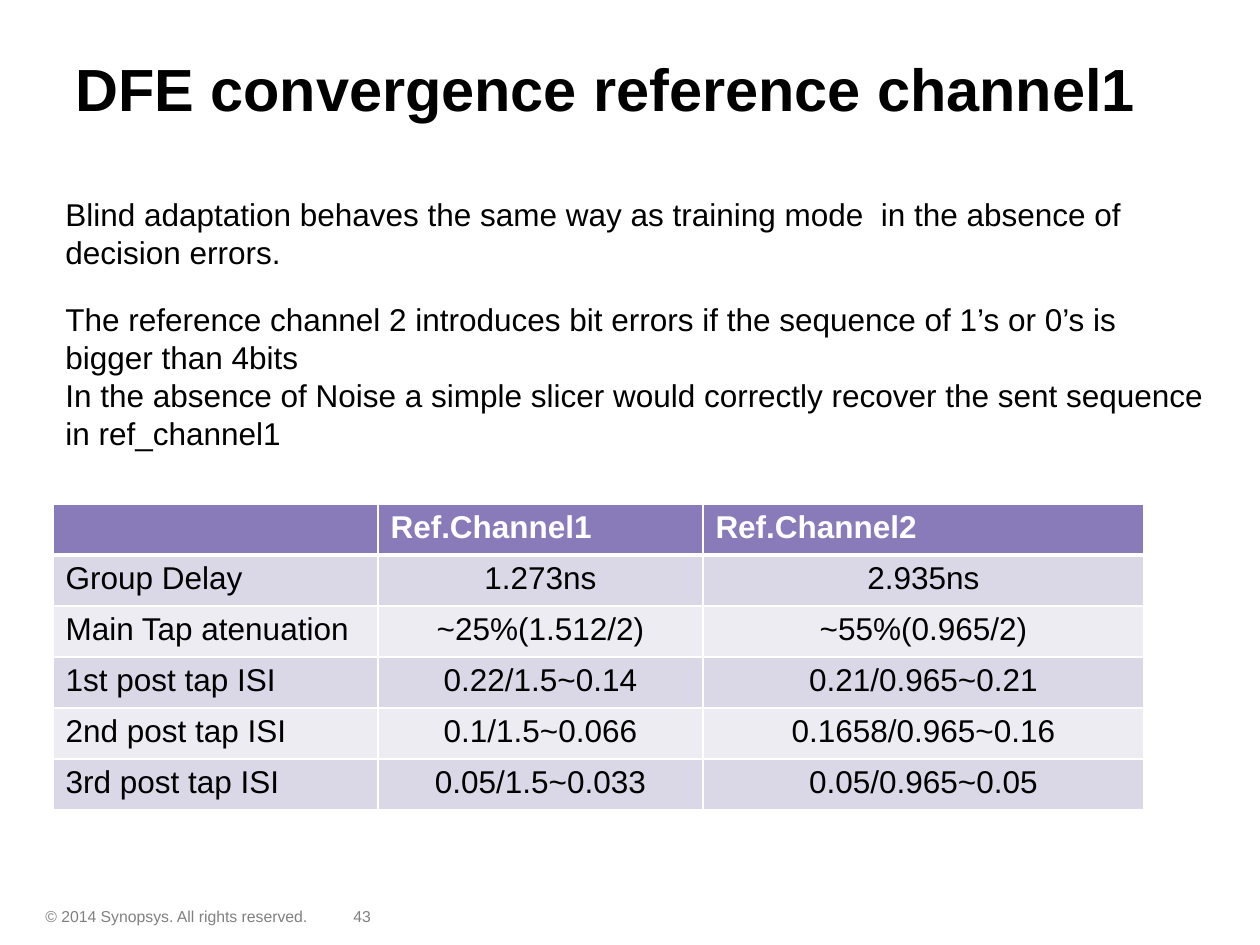
from lxml.etree import SubElement
from pptx import Presentation
from pptx.dml.color import RGBColor
from pptx.enum.text import MSO_ANCHOR, PP_ALIGN
from pptx.oxml.ns import qn
from pptx.util import Emu, Pt

COLORS = {
    "black": "000000",
    "white": "FFFFFF",
    "grey": "808080",
    "header": "897ABA",
    "odd": "DAD7E7",
    "even": "EDECF3",
}
FORMATS = {
    "title": {"size": Pt(34), "bold": True, "color": "black"},
    "body": {"size": Pt(18), "bold": False, "color": "black"},
    "header": {"size": Pt(18), "bold": True, "color": "white"},
    "footer": {"size": Pt(9), "bold": False, "color": "grey"},
}
FONT = "Arial"
EMU_PER_PX = 914400 / 126

CHANNEL_ROWS = [
    ["", "Ref.Channel1", "Ref.Channel2"],
    ["Group Delay", "1.273ns", "2.935ns"],
    ["Main Tap atenuation", "~25%(1.512/2)", "~55%(0.965/2)"],
    ["1st post tap ISI", "0.22/1.5~0.14", "0.21/0.965~0.21"],
    ["2nd post tap ISI", "0.1/1.5~0.066", "0.1658/0.965~0.16"],
    ["3rd post tap ISI", "0.05/1.5~0.033", "0.05/0.965~0.05"],
]


def px(length):
    return Emu(round(length * EMU_PER_PX))


class SlideBuilder:
    def __init__(self, deck):
        self.page = deck.slides.add_slide(deck.slide_layouts[6])

    def style(self, para, name):
        values = {"name": FONT, **FORMATS[name]}
        color = values.pop("color")
        for attribute, value in values.items():
            setattr(para.font, attribute, value)
        para.font.color.rgb = RGBColor.from_string(COLORS[color])

    def text(self, area, lines, style, anchor=MSO_ANCHOR.TOP):
        box = self.page.shapes.add_textbox(*map(px, area))
        frame = box.text_frame
        frame.word_wrap = True
        frame.vertical_anchor = anchor
        frame.text = "\n".join(lines)
        for para in frame.paragraphs:
            self.style(para, style)

    def borders(self, cell, widths):
        properties = cell._tc.get_or_add_tcPr()
        for position, (side, width) in enumerate(widths.items()):
            line = SubElement(properties, qn(f"a:ln{side}"), w=str(Pt(width)))
            fill = SubElement(line, qn("a:solidFill"))
            SubElement(fill, qn("a:srgbClr"), val=COLORS["white"])
            properties.insert(position, line)

    def table(self, left, top, widths, row_height, rows):
        area = (left, top, sum(widths), row_height * len(rows))
        frame = self.page.shapes.add_table(len(rows), len(widths), *map(px, area))
        grid = frame.table
        for column, width in zip(grid.columns, widths):
            column.width = px(width)
        for row_index, values in enumerate(rows):
            grid.rows[row_index].height = px(row_height)
            header = row_index == 0
            band = "header" if header else "odd" if row_index % 2 else "even"
            edges = {
                "L": 1,
                "R": 1,
                "T": 3 if row_index == 1 else 1,
                "B": 3 if header else 1,
            }
            for column_index, value in enumerate(values):
                cell = grid.cell(row_index, column_index)
                cell.text = value
                cell.fill.solid()
                cell.fill.fore_color.rgb = RGBColor.from_string(COLORS[band])
                self.borders(cell, edges)
                para = cell.text_frame.paragraphs[0]
                self.style(para, "header" if header else "body")
                if not header and column_index:
                    para.alignment = PP_ALIGN.CENTER


def main():
    deck = Presentation()
    deck.slide_width, deck.slide_height = px(1260), px(945)
    slide = SlideBuilder(deck)
    slide.text((33, 901, 388, 32), ["© 2014 Synopsys. All rights reserved."], "footer")
    slide.text((341, 901, 88, 32), ["43"], "footer")
    slide.text(
        (63, 9, 1197, 158),
        ["DFE convergence reference channel1"],
        "title",
        MSO_ANCHOR.MIDDLE,
    )
    slide.text(
        (53, 189, 1144, 89),
        ["Blind adaptation behaves the same way as training mode  in the absence of decision errors."],
        "body",
    )
    slide.table(53, 504, [325, 325, 441], 51, CHANNEL_ROWS)
    slide.text(
        (53, 294, 1166, 165),
        [
            "The reference channel 2 introduces bit errors if the sequence of 1’s or 0’s is bigger than 4bits",
            "In the absence of Noise a simple slicer would correctly recover the sent sequence in ref_channel1",
        ],
        "body",
    )
    deck.save("out.pptx")


if __name__ == "__main__":
    main()
